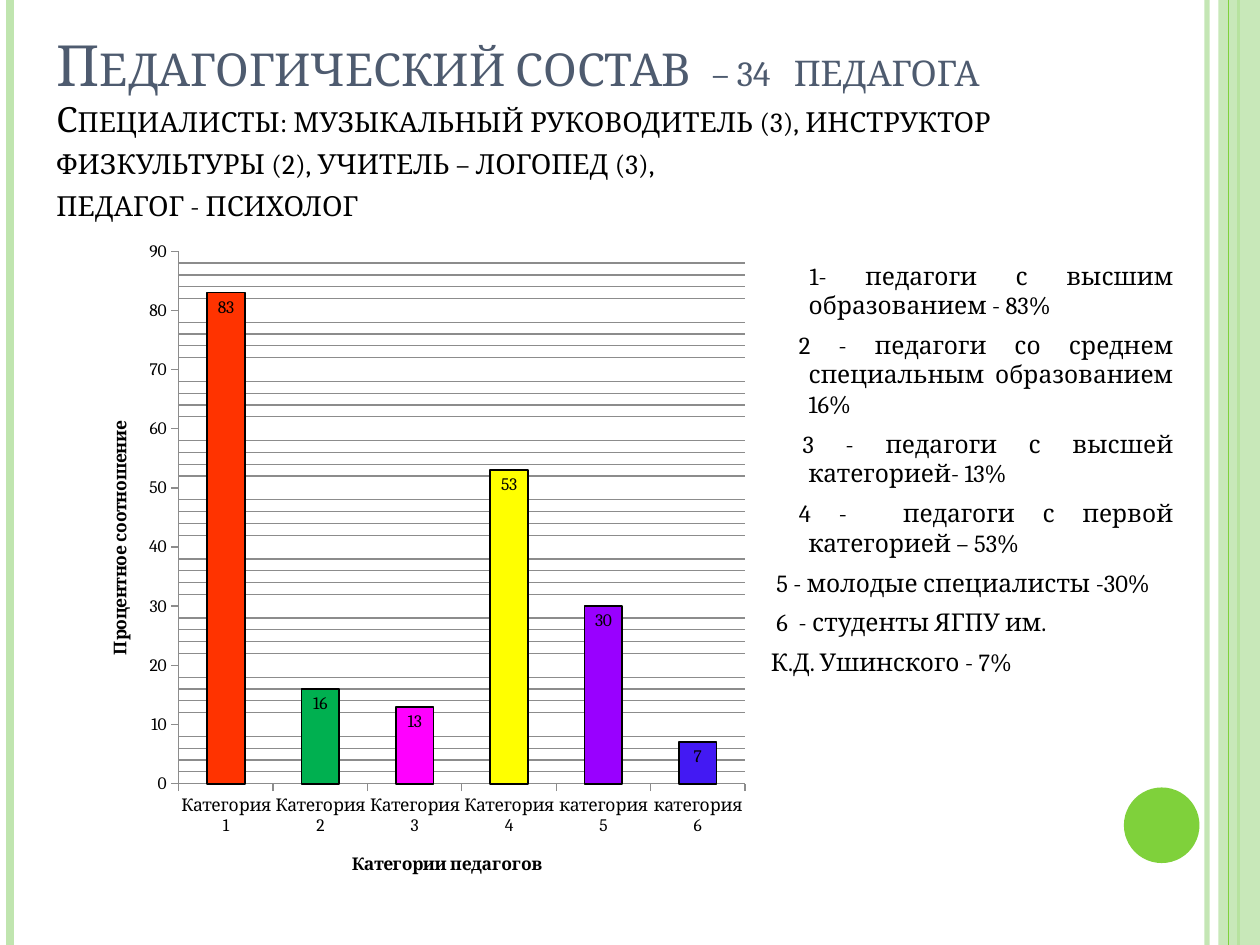
from lxml.etree import SubElement
from pptx import Presentation
from pptx.chart.data import CategoryChartData
from pptx.dml.color import RGBColor
from pptx.enum.chart import XL_CHART_TYPE, XL_LABEL_POSITION, XL_TICK_MARK
from pptx.enum.shapes import MSO_CONNECTOR, MSO_SHAPE
from pptx.enum.text import MSO_ANCHOR, PP_ALIGN
from pptx.oxml import parse_xml
from pptx.oxml.ns import nsdecls, qn
from pptx.util import Inches, Pt

FONT = "Cambria"
BLACK, SLATE, GREEN, PALE_GREEN, GRID = "000000", "4E5B6F", "7FD13B", "C0E5AF", "8C8C8C"
WIDTH, HEIGHT = 10, 7.5

TITLE_RUNS = [
    ("Педагогический состав  ", 32.4, SLATE),
    ("– 34   педагога\v", 25.2, SLATE),
    ("Специалисты: музыкальный руководитель (3), инструктор "
     "физкультуры (2), учитель – логопед (3),\vпедагог - психолог", 19.8, BLACK),
]
LEGEND_LINES = [
    " 1- педагоги с высшим образованием - 83%",
    " 2 - педагоги со среднем специальным образованием 16%",
    " 3 - педагоги с высшей категорией- 13%",
    " 4 -  педагоги с первой категорией – 53%",
    " 5 - молодые специалисты -30%",
    " 6  - студенты ЯГПУ им. ",
    "К.Д. Ушинского - 7%",
]
BARS = [
    ("Категория 1", 83, "FF3300"),
    ("Категория 2", 16, "00B050"),
    ("Категория 3", 13, "FF00FF"),
    ("Категория 4", 53, "FFFF00"),
    ("категория 5", 30, "9900FF"),
    ("категория 6", 7, "4319F3"),
]


def color(value):
    return RGBColor.from_string(value)


def apply(target, values):
    for name, value in values.items():
        setattr(target, name, value)


class SlideBuilder:
    """Draws styled elements on the current slide."""

    def __init__(self, slide, font_name):
        self.slide = slide
        self.font_name = font_name

    def style_font(self, font, size, value=BLACK, bold=False):
        apply(font, {"name": self.font_name, "size": Pt(size), "bold": bold})
        font.color.rgb = color(value)

    def set_alpha(self, element, percent):
        for color_element in element.iter(qn("a:srgbClr")):
            SubElement(color_element, qn("a:alpha"), val=str(percent * 1000))

    def vertical_line(self, x, value, width, alpha=100):
        line = self.slide.shapes.add_connector(
            MSO_CONNECTOR.STRAIGHT, Inches(x), 0, Inches(x), Inches(HEIGHT))
        line.line.color.rgb = color(value)
        line.line.width = Pt(width)
        if alpha < 100:
            self.set_alpha(line._element.spPr, alpha)
        SubElement(line._element.spPr, qn("a:effectLst"))

    def filled_shape(self, kind, box, value, alpha=100):
        shape = self.slide.shapes.add_shape(kind, *map(Inches, box))
        shape.shadow.inherit = False
        shape.fill.solid()
        shape.fill.fore_color.rgb = color(value)
        shape.line.fill.background()
        if alpha < 100:
            self.set_alpha(shape._element.spPr, alpha)

    def text_frame(self, box, **values):
        frame = self.slide.shapes.add_textbox(*map(Inches, box)).text_frame
        apply(frame, {"word_wrap": True, **values})
        return frame

    def title(self, box, runs):
        frame = self.text_frame(box, vertical_anchor=MSO_ANCHOR.BOTTOM, margin_bottom=Inches(0.47))
        paragraph = frame.paragraphs[0]
        for text, size, value in runs:
            for index, part in enumerate(text.split("\v")):
                if index:
                    paragraph.add_line_break()
                if part:
                    run = paragraph.add_run()
                    run.text = part
                    self.style_font(run.font, size, value)
                    run.font._element.set("cap", "small")

    def legend(self, box, lines):
        frame = self.text_frame(box)
        for index, line in enumerate(lines):
            paragraph = frame.add_paragraph() if index else frame.paragraphs[0]
            paragraph.alignment = PP_ALIGN.JUSTIFY
            paragraph.space_before = Pt(6 if index else 0)
            for name, value in {"marL": Inches(0.3), "indent": Inches(-0.3)}.items():
                paragraph._p.get_or_add_pPr().set(name, str(value))
            run = paragraph.add_run()
            run.text = line
            self.style_font(run.font, 14)

    def axis(self, axis, title):
        axis.has_major_gridlines = False
        apply(axis, {"major_tick_mark": XL_TICK_MARK.OUTSIDE, "minor_tick_mark": XL_TICK_MARK.NONE})
        axis.format.line.color.rgb = color(GRID)
        self.style_font(axis.tick_labels.font, 10)
        axis.has_title = True
        run = axis.axis_title.text_frame.paragraphs[0].add_run()
        run.text = title
        self.style_font(run.font, 10, bold=True)

    def column_chart(self, box, bars, category_title, value_title):
        data = CategoryChartData()
        data.categories = [name for name, _, _ in bars]
        data.add_series("Series 1", [value for _, value, _ in bars])
        chart = self.slide.shapes.add_chart(
            XL_CHART_TYPE.COLUMN_CLUSTERED, *map(Inches, box), data).chart
        apply(chart, {"has_legend": False, "has_title": False})
        self.style_font(chart.font, 10)
        self.axis(chart.category_axis, category_title)
        self.axis(chart.value_axis, value_title)
        apply(chart.value_axis, {"minimum_scale": 0, "maximum_scale": 90, "major_unit": 10,
                                 "minor_unit": 2, "has_minor_gridlines": True})
        self.minor_gridlines(chart.value_axis)
        plot = chart.plots[0]
        apply(plot, {"gap_width": 150, "vary_by_categories": False, "has_data_labels": True})
        apply(plot.data_labels, {"show_value": True, "position": XL_LABEL_POSITION.INSIDE_END})
        self.style_font(plot.data_labels.font, 10)
        for index, (_, _, value) in enumerate(bars):
            point = plot.series[0].points[index].format
            point.fill.solid()
            point.fill.fore_color.rgb = color(value)
            point.line.color.rgb = color(BLACK)
            point.line.width = Pt(1)
        self.plot_layout(chart, {"x": 0.14, "y": 0.04, "w": 0.84, "h": 0.79})

    def minor_gridlines(self, axis):
        axis._element.find(qn("c:minorGridlines")).append(parse_xml(
            f'<c:spPr {nsdecls("c", "a")}><a:ln w="{Pt(0.75)}"><a:solidFill>'
            f'<a:srgbClr val="{GRID}"/></a:solidFill></a:ln></c:spPr>'))

    def plot_layout(self, chart, fractions):
        modes = "".join(f'<c:{side}Mode val="edge"/>' for side in "xy")
        sizes = "".join(f'<c:{side} val="{value}"/>' for side, value in fractions.items())
        plot_area = chart._chartSpace.chart.plotArea
        for layout in plot_area.findall(qn("c:layout")):
            plot_area.remove(layout)
        plot_area.insert(0, parse_xml(
            f'<c:layout {nsdecls("c")}><c:manualLayout><c:layoutTarget val="inner"/>'
            f'{modes}{sizes}</c:manualLayout></c:layout>'))


def main():
    presentation = Presentation()
    apply(presentation, {"slide_width": Inches(WIDTH), "slide_height": Inches(HEIGHT)})
    builder = SlideBuilder(presentation.slides.add_slide(presentation.slide_layouts[6]), FONT)
    builder.vertical_line(9.58, PALE_GREEN, 3, alpha=93)
    builder.vertical_line(0.08, PALE_GREEN, 4.5)
    builder.vertical_line(9.83, GREEN, 1.5)
    builder.filled_shape(MSO_SHAPE.RECTANGLE, (9.67, 0, 0.33, HEIGHT), PALE_GREEN, alpha=87)
    builder.vertical_line(9.75, GREEN, 0.75)
    builder.filled_shape(MSO_SHAPE.OVAL, (8.92, 6.25, 0.6, 0.6), GREEN)
    builder.column_chart((0.67, 1.78, 5.35, 5.35), BARS,
                         "Категории педагогов", "Процентное соотношение")
    builder.legend((6.02, 2.02, 3.39, 4.44), LEGEND_LINES)
    builder.title((0.35, 0.6, 9.13, 1.64), TITLE_RUNS)
    presentation.save("out.pptx")


if __name__ == "__main__":
    main()
